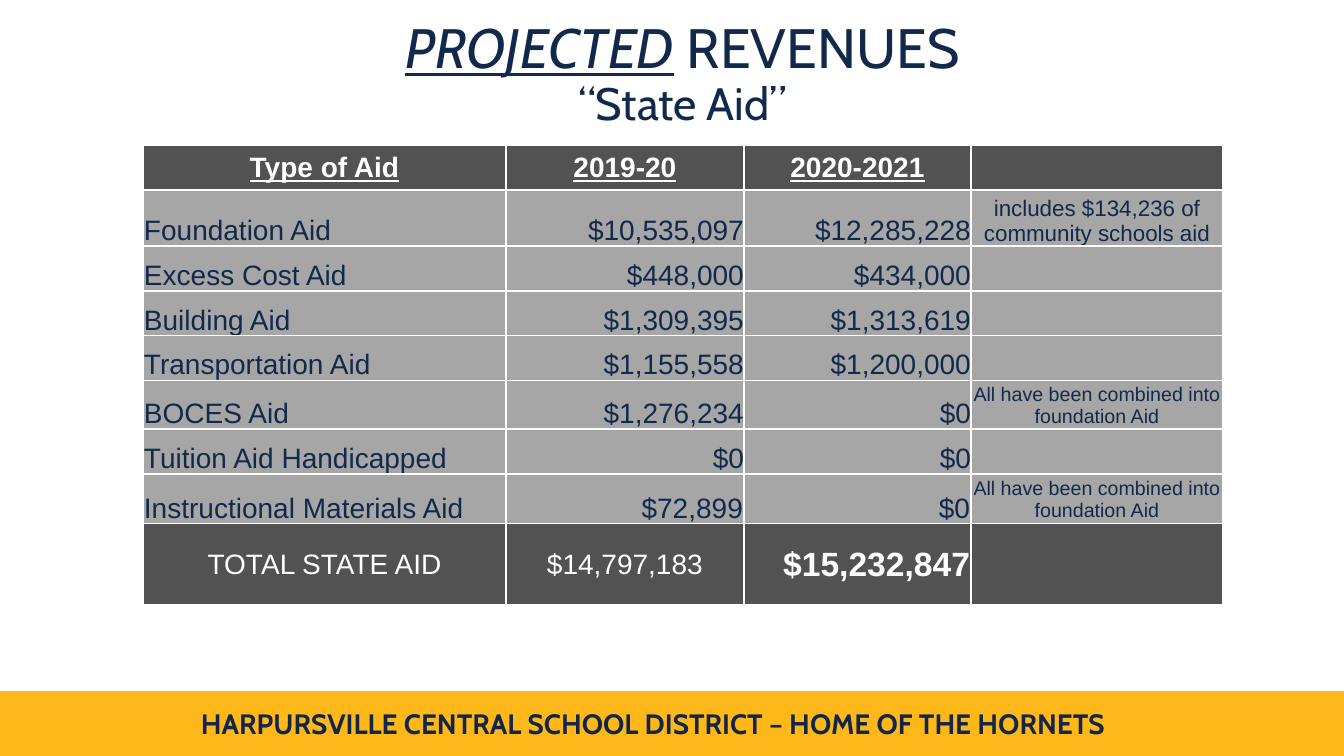
import pptx
import pptx.util
import pptx.dml.color
import pptx.enum.shapes
import pptx.enum.text
import pptx.oxml
import pptx.oxml.ns
import lxml.etree

PX = 9525 / 1.05
NAVY, WHITE, DARK, GREY, GOLD = "13294B", "FFFFFF", "525252", "A6A6A6", "FFB819"
ALIGN = pptx.enum.text.PP_ALIGN
ANCHOR = pptx.enum.text.MSO_ANCHOR
qn = pptx.oxml.ns.qn


def px(*values):
    return [round(v * PX) for v in values]


def style(obj, color, size=None, font=None, bold=False):
    if size is None:
        obj.solid()
        obj.fore_color.rgb = pptx.dml.color.RGBColor.from_string(color)
        return
    obj.font.name = font
    obj.font.size = pptx.util.Pt(size)
    obj.font.bold = bold
    obj.font.color.rgb = pptx.dml.color.RGBColor.from_string(color)


prs = pptx.Presentation()
prs.slide_width, prs.slide_height = px(1344, 756)
slide = prs.slides.add_slide(prs.slide_layouts[5])

bar = slide.shapes.add_shape(pptx.enum.shapes.MSO_SHAPE.RECTANGLE, *px(0, 692, 1344, 64))
bar.shadow.inherit = False
style(bar.fill, GOLD)
style(bar.line.fill, GOLD)
bar.line.width = pptx.util.Pt(1)

footer = slide.shapes.add_textbox(*px(177, 702, 952, 44))
tf = footer.text_frame
tf.word_wrap = True
tf.text = "HARPURSVILLE CENTRAL SCHOOL DISTRICT – HOME OF THE HORNETS"
p = tf.paragraphs[0]
p.alignment = ALIGN.CENTER
style(p.runs[0], "132649", 20, "Cabin", True)

title = slide.shapes.title
title.left, title.top, title.width, title.height = px(103, 23, 1159, 105)
style(title.fill, WHITE)
tf = title.text_frame
tf.auto_size = pptx.enum.text.MSO_AUTO_SIZE.NONE
tf.vertical_anchor = ANCHOR.MIDDLE
p = tf.paragraphs[0]
p.alignment = ALIGN.CENTER
p.line_spacing = 0.9
for text, size in [("PROJECTED", 39.6), (" REVENUES", 39.6), ("“State Aid”", 32.4)]:
    if size < 39:
        p.add_line_break()
        lxml.etree.SubElement(p._p.xpath("a:br")[0], qn("a:rPr"), sz="3960")
    r = p.add_run()
    r.text = text
    style(r, NAVY, size, "Cabin")
p.runs[0].font.italic = True
p.runs[0].font.underline = True

COMBINED = "All have been combined into foundation Aid"
rows = [
    ("Type of Aid", "2019-20", "2020-2021", ""),
    ("Foundation Aid", "$10,535,097", "$12,285,228", "includes $134,236 of community schools aid"),
    ("Excess Cost Aid", "$448,000", "$434,000", ""),
    ("Building Aid", "$1,309,395", "$1,313,619", ""),
    ("Transportation Aid", "$1,155,558", "$1,200,000", ""),
    ("BOCES Aid", "$1,276,234", "$0", COMBINED),
    ("Tuition Aid Handicapped", "$0", "$0", ""),
    ("Instructional Materials Aid", "$72,899", "$0", COMBINED),
    ("TOTAL STATE AID", "$14,797,183", "$15,232,847", ""),
]
widths = [363, 238, 227, 252]
heights = [45, 56, 45, 45, 45, 45, 45, 50, 81]
last = len(rows) - 1
frame = slide.shapes.add_table(len(rows), 4, *px(143, 145, sum(widths), sum(heights)))
table = frame.table
for column, width in zip(table.columns, px(*widths)):
    column.width = width
for row, height in zip(table.rows, px(*heights)):
    row.height = height

for i, texts in enumerate(rows):
    for j, text in enumerate(texts):
        cell = table.cell(i, j)
        edge = 0 if j in (1, 2) and 0 < i < 7 else 1
        cell.margin_left, cell.margin_top, cell.margin_right, cell.margin_bottom = px(edge, edge, edge, 0)
        band = i in (0, last)
        for side in ("lnL", "lnR", "lnT", "lnB"):
            ln = lxml.etree.SubElement(cell._tc.get_or_add_tcPr(), qn(f"a:{side}"), w="12700")
            fill = lxml.etree.SubElement(ln, qn("a:solidFill"))
            lxml.etree.SubElement(fill, qn("a:srgbClr"), val=WHITE)
        style(cell.fill, DARK if band else GREY)
        middle = band or text == COMBINED
        cell.vertical_anchor = ANCHOR.MIDDLE if middle else ANCHOR.BOTTOM
        if not text:
            continue
        cell.text = text
        p = cell.text_frame.paragraphs[0]
        total = i == last and j == 2
        if total:
            p.alignment = ALIGN.RIGHT
        elif band:
            p.alignment = ALIGN.CENTER
        else:
            p.alignment = (ALIGN.LEFT, ALIGN.RIGHT, ALIGN.RIGHT, ALIGN.CENTER)[j]
        size = 24 if total else 14 if text == COMBINED else 16 if j == 3 else 20
        r = p.runs[0]
        style(r, WHITE if band else NAVY, size, "Arial", i == 0 or total)
        r.font.underline = i == 0

prs.save("out.pptx")
